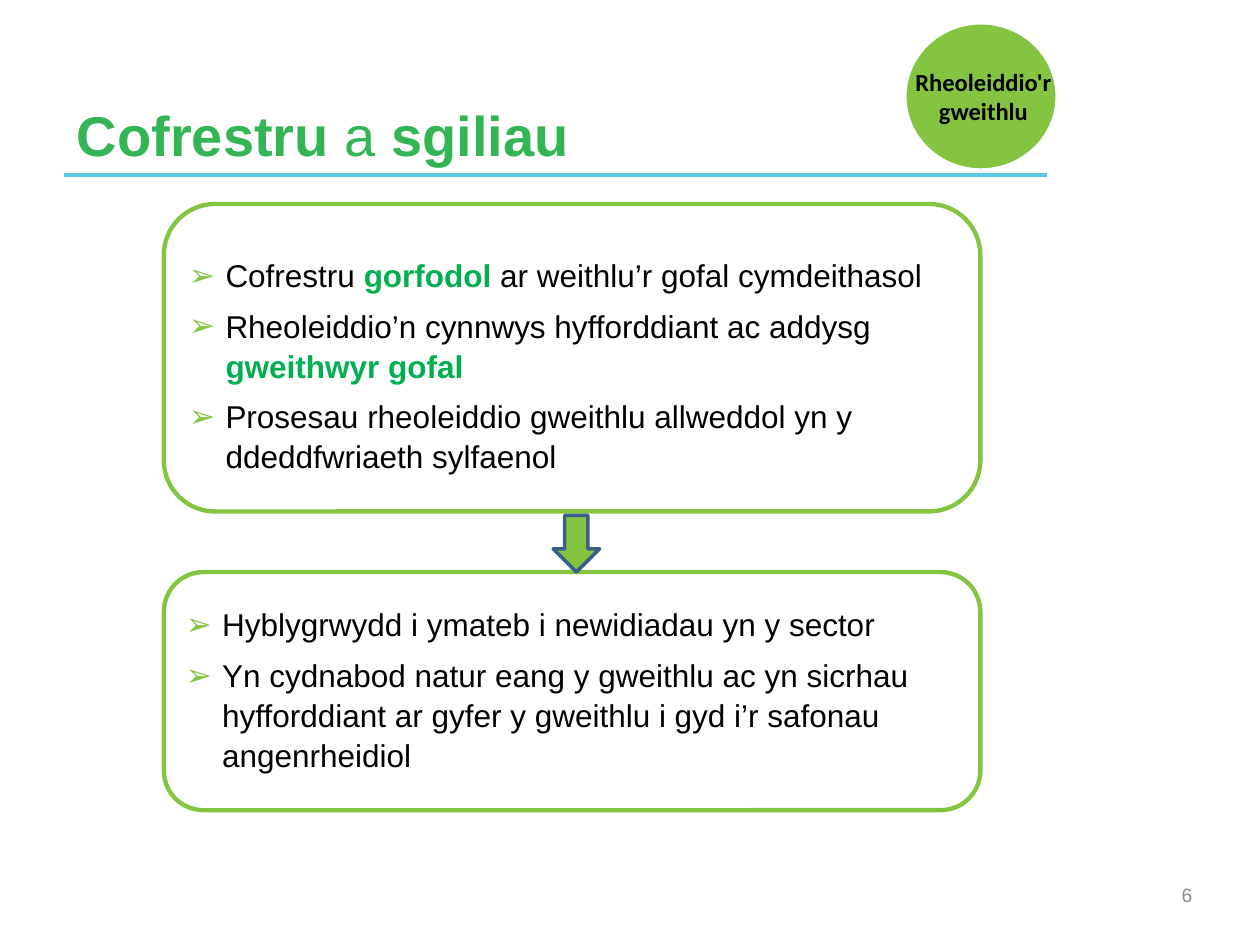
"""Build the slide on registration and skills, with two linked bullet boxes."""
from lxml import etree
from pptx import Presentation
from pptx.dml.color import RGBColor
from pptx.enum.shapes import MSO_CONNECTOR, MSO_SHAPE as Shape
from pptx.enum.text import MSO_ANCHOR as Anchor, MSO_AUTO_SIZE, PP_ALIGN as Align
from pptx.oxml.ns import qn
from pptx.util import Pt

LIME, GREEN, TITLE_GREEN, BLACK = "85C441", "00B050", "34B555", "000000"
color = RGBColor.from_string


def add_span(para, text, size, hex_color, bold=False, font="Arial"):
    span = para.add_run()
    span.text = text
    span.font.name, span.font.size, span.font.bold = font, Pt(size), bold
    span.font.color.rgb = color(hex_color)


def set_frame(box, left, top, right, bottom, anchor=Anchor.MIDDLE):
    frame = box.text_frame
    frame.word_wrap, frame.auto_size = True, MSO_AUTO_SIZE.NONE
    frame.vertical_anchor = anchor
    frame.margin_left, frame.margin_top = Pt(left), Pt(top)
    frame.margin_right, frame.margin_bottom = Pt(right), Pt(bottom)
    return frame


deck = Presentation()
deck.slide_width, deck.slide_height = Pt(720), Pt(540)
page = deck.slides.add_slide(deck.slide_layouts[5])
shapes = page.shapes

rule = shapes.add_connector(MSO_CONNECTOR.STRAIGHT, Pt(36.7), Pt(100), Pt(598.3), Pt(100))
rule.line.color.rgb, rule.line.width = color("5CC9E3"), Pt(2)
etree.SubElement(rule._element.spPr, qn("a:effectLst"))

title = shapes.title
title.left, title.top, title.width, title.height = Pt(36.7), Pt(20.9), Pt(561.6), Pt(78.5)
para = set_frame(title, 7.2, 3.6, 7.2, 3.6, Anchor.BOTTOM).paragraphs[0]
para.alignment = Align.LEFT
for text, bold in [("Cofrestru", True), (" a ", False), ("sgiliau", True)]:
    add_span(para, text, 32, TITLE_GREEN, bold)

number = shapes.add_textbox(Pt(520.6), Pt(496.8), Pt(167.8), Pt(28.8))
para = set_frame(number, 7.2, 3.6, 7.2, 3.6).paragraphs[0]
para.alignment = Align.RIGHT
add_span(para, "6", 11, "8C8C8C")

bullet_boxes = [
    (116.6, 175.7, (5.8, 8, 0, 0), [
        [("Cofrestru ", False), ("gorfodol", True), (" ar weithlu’r gofal cymdeithasol", False)],
        [("Rheoleiddio’n cynnwys hyfforddiant ac addysg ", False), ("gweithwyr gofal", True)],
        [("Prosesau rheoleiddio gweithlu allweddol yn y ddeddfwriaeth sylfaenol", False)],
    ]),
    (326.9, 136.1, (5.8, 0, 2.9, 3), [
        [("Hyblygrwydd i ymateb i newidiadau yn y sector", False)],
        [("Yn cydnabod natur eang y gweithlu ac yn sicrhau hyfforddiant "
          "ar gyfer y gweithlu i gyd i’r safonau angenrheidiol", False)],
    ]),
]
for top, height, margins, items in bullet_boxes:
    box = shapes.add_shape(Shape.ROUNDED_RECTANGLE, Pt(93.6), Pt(top), Pt(466.6), Pt(height))
    box.shadow.inherit = False
    box.fill.background()
    box.line.color.rgb, box.line.width = color(LIME), Pt(2.5)
    frame = set_frame(box, *margins)
    for index, item in enumerate(items):
        para = frame.add_paragraph() if index else frame.paragraphs[0]
        para.alignment, para.line_spacing = Align.LEFT, 1.05
        para.space_before = Pt(6.3 if index else 0)
        props = para._p.get_or_add_pPr()
        props.set("marL", str(Pt(20.9)))
        props.set("indent", str(-Pt(20.9)))
        bullet_color = etree.SubElement(props, qn("a:buClr"))
        etree.SubElement(bullet_color, qn("a:srgbClr"), val=LIME)
        etree.SubElement(props, qn("a:buFont"), typeface="Arial")
        etree.SubElement(props, qn("a:buChar"), char="➢")
        for text, strong in item:
            add_span(para, text, 18, GREEN if strong else BLACK, strong)

accents = [
    (Shape.DOWN_ARROW, 316.1, 294.5, 26.6, 32.4, "3A5F8C"),
    (Shape.OVAL, 517, 13, 87.1, 84.2, "FFFFFF"),
]
for kind, left, top, width, height, outline in accents:
    accent = shapes.add_shape(kind, Pt(left), Pt(top), Pt(width), Pt(height))
    accent.shadow.inherit = False
    accent.fill.solid()
    accent.fill.fore_color.rgb = color(LIME)
    accent.line.color.rgb, accent.line.width = color(outline), Pt(2)

label = shapes.add_textbox(Pt(518.4), Pt(13), Pt(87.1), Pt(84.2))
frame = set_frame(label, 1.4, 1.4, 1.4, 1.4)
for index, text in enumerate(["Rheoleiddio'r", "gweithlu"]):
    para = frame.add_paragraph() if index else frame.paragraphs[0]
    para.alignment = Align.CENTER
    add_span(para, text, 14, BLACK, True, "Calibri")

deck.save("out.pptx")
